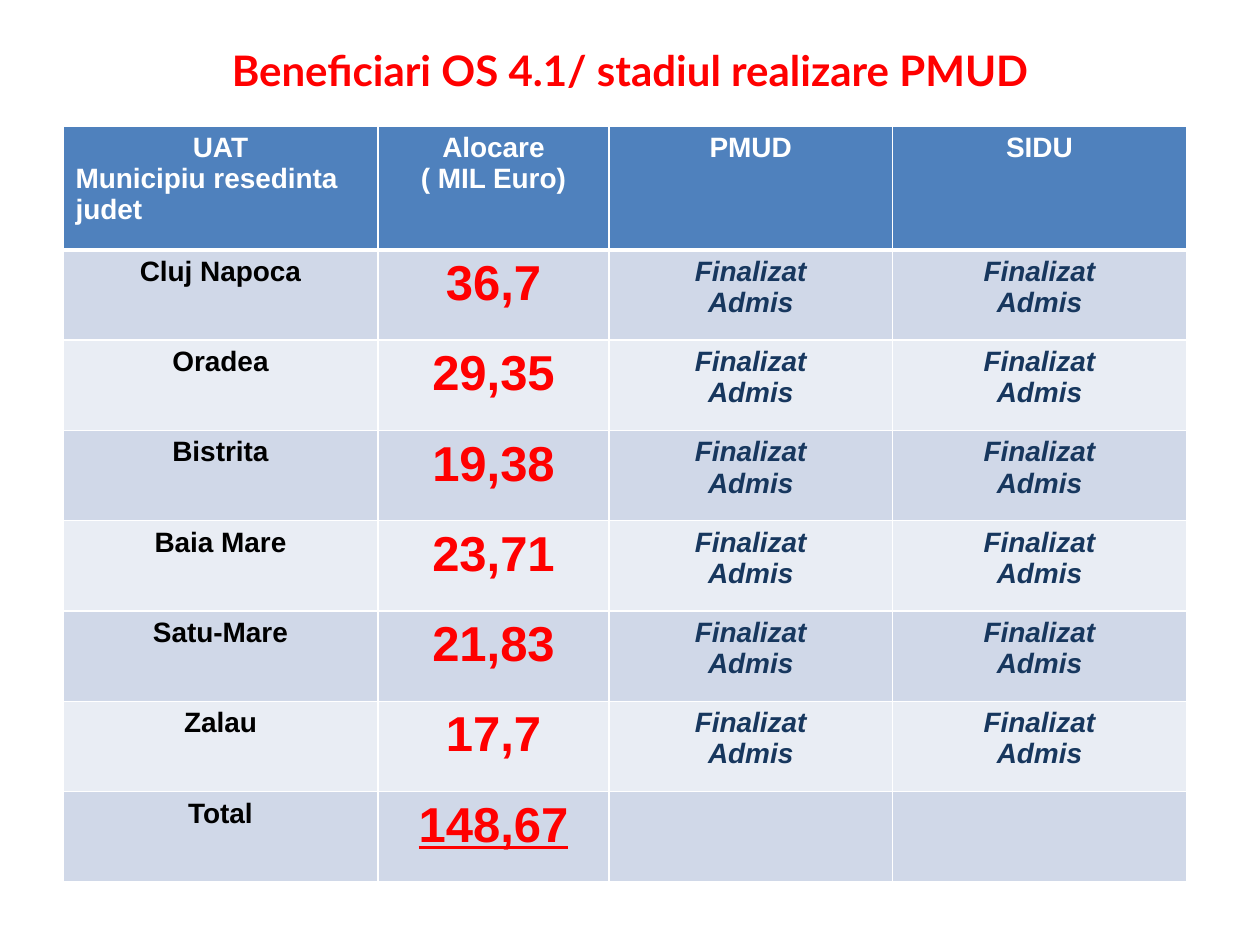
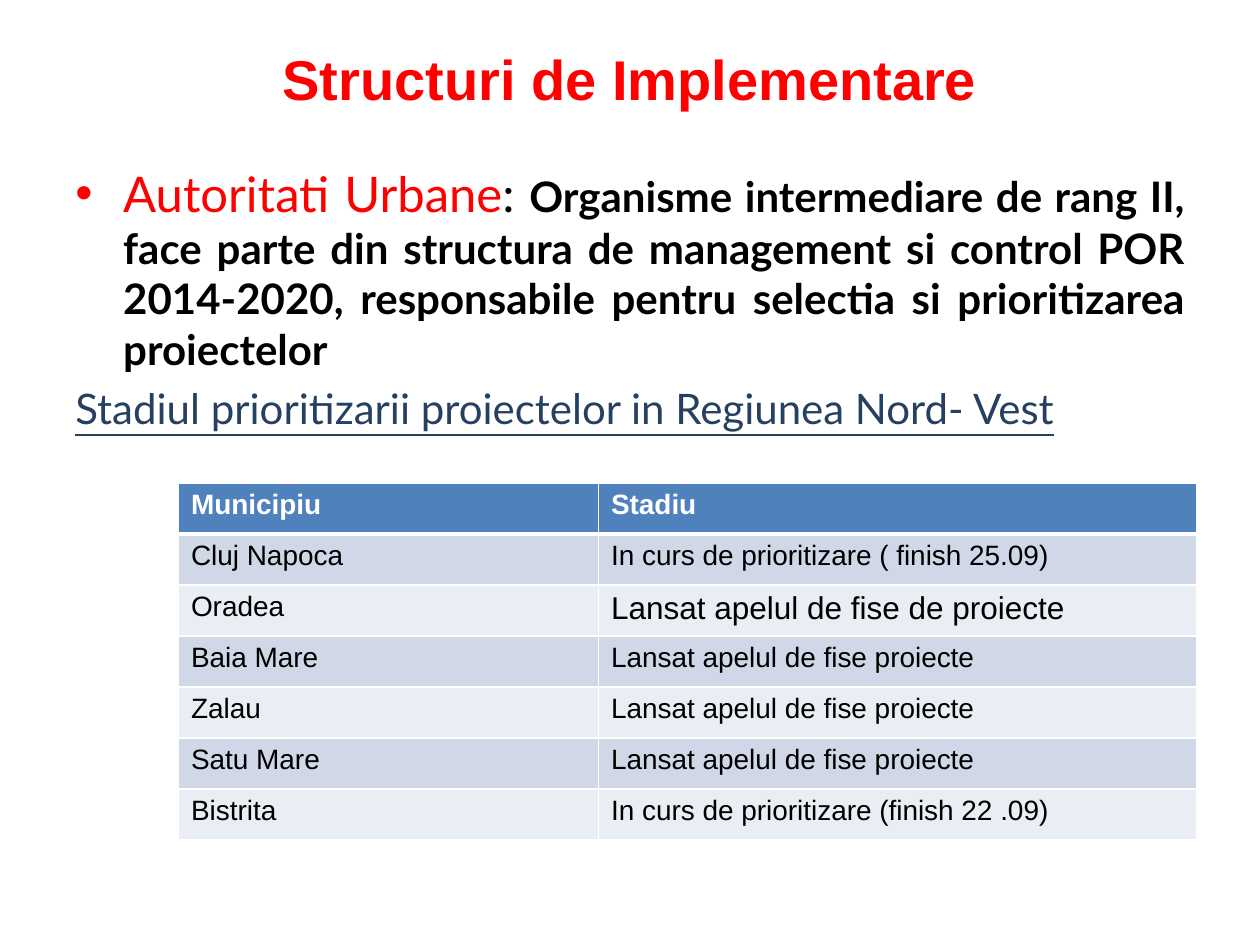
from lxml import etree
from pptx import Presentation, util as u
from pptx.dml.color import RGBColor
from pptx.enum import text
from pptx.oxml import ns

# Shared look
RED, BLACK, WHITE, NAVY, SLATE = "FF0000", "000000", "FFFFFF", "17375E", "254061"
HEADER, BANDS = "4F81BD", ("D0D8E8", "E9EDF4")
SANS, HUMANIST = "Arial", "Lato"
CENTER, LEFT, JUSTIFY = (text.PP_ALIGN.CENTER, text.PP_ALIGN.LEFT,
                         text.PP_ALIGN.JUSTIFY)

# The slide is a grid of 120 columns and 90 rows, twelve to the inch
UNIT = u.Inches(10) // 120
TITLE_BOX = (6, 3.6, 108, 10.4)


def grid(*counts):
    return [round(count * UNIT) for count in counts]


def color(value):
    return RGBColor.from_string(value)


def write(para, words, size=16, font=SANS, ink=BLACK, bold=False,
          italic=False, underline=False):
    """Add one formatted span to a paragraph."""
    span = para.add_run()
    span.text = words
    style = span.font
    style.size, style.name = u.Pt(size), font
    style.bold, style.italic, style.underline = bold, italic, underline
    style.color.rgb = color(ink)


def add_page(deck, heading, **style):
    """Add a title-only slide with its red heading."""
    page = deck.slides.add_slide(deck.slide_layouts[5])
    title = page.shapes.title
    title.left, title.top, title.width, title.height = grid(*TITLE_BOX)
    frame = title.text_frame
    frame.auto_size = text.MSO_AUTO_SIZE.NONE
    frame.vertical_anchor = text.MSO_ANCHOR.TOP
    frame.paragraphs[0].alignment = CENTER
    write(frame.paragraphs[0], heading, ink=RED, bold=True, **style)
    return page


def set_borders(cell, is_header):
    """Draw white cell borders, heavier below the header."""
    properties = cell._tc.get_or_add_tcPr()
    for position, side in enumerate(("lnL", "lnR", "lnT", "lnB")):
        width = 3 if is_header and side == "lnB" else 1
        line = etree.Element(ns.qn("a:" + side), w=str(u.Pt(width)))
        fill = etree.SubElement(line, ns.qn("a:solidFill"))
        etree.SubElement(fill, ns.qn("a:srgbClr"), val=WHITE)
        properties.insert(position, line)


def add_grid_table(page, box, columns, header_height, rows, cell_format):
    """Add a banded table; cell_format(row, column) gives alignment and style.

    Each line of a cell's text becomes a paragraph.
    """
    table = page.shapes.add_table(len(rows), len(columns), *grid(*box)).table
    for column, width in zip(table.columns, columns):
        column.width = grid(width)[0]
    body_height = (box[3] - header_height) / (len(rows) - 1)
    for r, row in enumerate(rows):
        table.rows[r].height = grid(body_height if r else header_height)[0]
        for c, words in enumerate(row):
            cell = table.cell(r, c)
            cell.fill.solid()
            cell.fill.fore_color.rgb = color(BANDS[(r - 1) % 2] if r else HEADER)
            set_borders(cell, r == 0)
            if not words:
                continue
            alignment, style = cell_format(r, c)
            for n, line in enumerate(words.split("\n")):
                frame = cell.text_frame
                para = frame.add_paragraph() if n else frame.paragraphs[0]
                para.alignment = alignment
                write(para, line, **style)
    return table


def allocation_page(deck):
    """Funding allocated to each city and the state of its plans."""
    page = add_page(deck, "Beneficiari OS 4.1/ stadiul realizare PMUD",
                    size=24, font=HUMANIST)
    allocations = {"Cluj Napoca": "36,7", "Oradea": "29,35", "Bistrita": "19,38",
                   "Baia Mare": "23,71", "Satu-Mare": "21,83", "Zalau": "17,7"}
    status = "Finalizat\nAdmis"
    rows = [("UAT\nMunicipiu resedinta judet", "Alocare\n( MIL Euro)",
             "PMUD", "SIDU")]
    rows += [(city, amount, status, status)
             for city, amount in allocations.items()]
    rows.append(("Total", "148,67", "", ""))

    def cell_format(r, c):
        if r == 0:
            style = dict(ink=WHITE)
        elif c == 0:
            style = dict(ink=BLACK)
        elif c == 1:
            style = dict(size=28, ink=RED, underline=r == len(rows) - 1)
        else:
            style = dict(ink=NAVY, italic=True)
        return CENTER, dict(style, bold=True)

    table = add_grid_table(page, (6, 12, 107, 72), (30, 22, 27, 28), 11.8,
                           rows, cell_format)
    table.cell(0, 0).text_frame.paragraphs[1].alignment = LEFT


def add_authorities(page, box):
    """Add the bulleted definition and the underlined lead-in."""
    frame = page.shapes.add_textbox(*grid(*box)).text_frame
    frame.word_wrap = True
    definition, lead_in = frame.paragraphs[0], frame.add_paragraph()
    definition.alignment = lead_in.alignment = JUSTIFY

    # Hanging red bullet
    indent = u.Inches(0.38)
    properties = definition._p.get_or_add_pPr()
    properties.set("marL", str(indent))
    properties.set("indent", str(-indent))
    bullet_color = etree.SubElement(properties, ns.qn("a:buClr"))
    etree.SubElement(bullet_color, ns.qn("a:srgbClr"), val=RED)
    etree.SubElement(properties, ns.qn("a:buFont"), typeface=SANS)
    etree.SubElement(properties, ns.qn("a:buChar"), char="•")

    write(definition, "Autoritati Urbane", size=28, font=HUMANIST, ink=RED)
    write(definition, ": ", size=28, font=HUMANIST)
    write(definition, "Organisme intermediare de rang II, face parte din "
          "structura de management si control POR 2014-2020, responsabile "
          "pentru selectia si prioritizarea proiectelor",
          size=24, font=HUMANIST, bold=True)
    lead_in.space_before = u.Pt(5)
    write(lead_in, "Stadiul prioritizarii proiectelor in Regiunea Nord- Vest",
          size=24, font=HUMANIST, ink=SLATE, underline=True)


def structures_page(deck):
    """Role of the urban authorities and each city's project stage."""
    page = add_page(deck, "Structuri de Implementare", size=32)
    add_authorities(page, (6, 15, 108, 30))
    launched = "Lansat apelul de fise proiecte"
    rows = [("Municipiu", "Stadiu"),
            ("Cluj Napoca", "In curs de prioritizare ( finish 25.09)"),
            ("Oradea", "Lansat apelul de fise de proiecte"),
            ("Baia Mare", launched),
            ("Zalau", launched),
            ("Satu Mare", launched),
            ("Bistrita", "In curs de prioritizare (finish 22 .09)")]

    def cell_format(r, c):
        if r == 0:
            return LEFT, dict(ink=WHITE, bold=True)
        is_oradea_stage = rows[r][0] == "Oradea" and c == 1
        return LEFT, dict(size=18 if is_oradea_stage else 16)

    add_grid_table(page, (17, 46, 97, 34), (40, 57), 34 / len(rows),
                   rows, cell_format)


def main():
    deck = Presentation()
    deck.slide_width, deck.slide_height = grid(120, 90)
    allocation_page(deck)
    structures_page(deck)
    deck.save("out.pptx")


if __name__ == "__main__":
    main()
